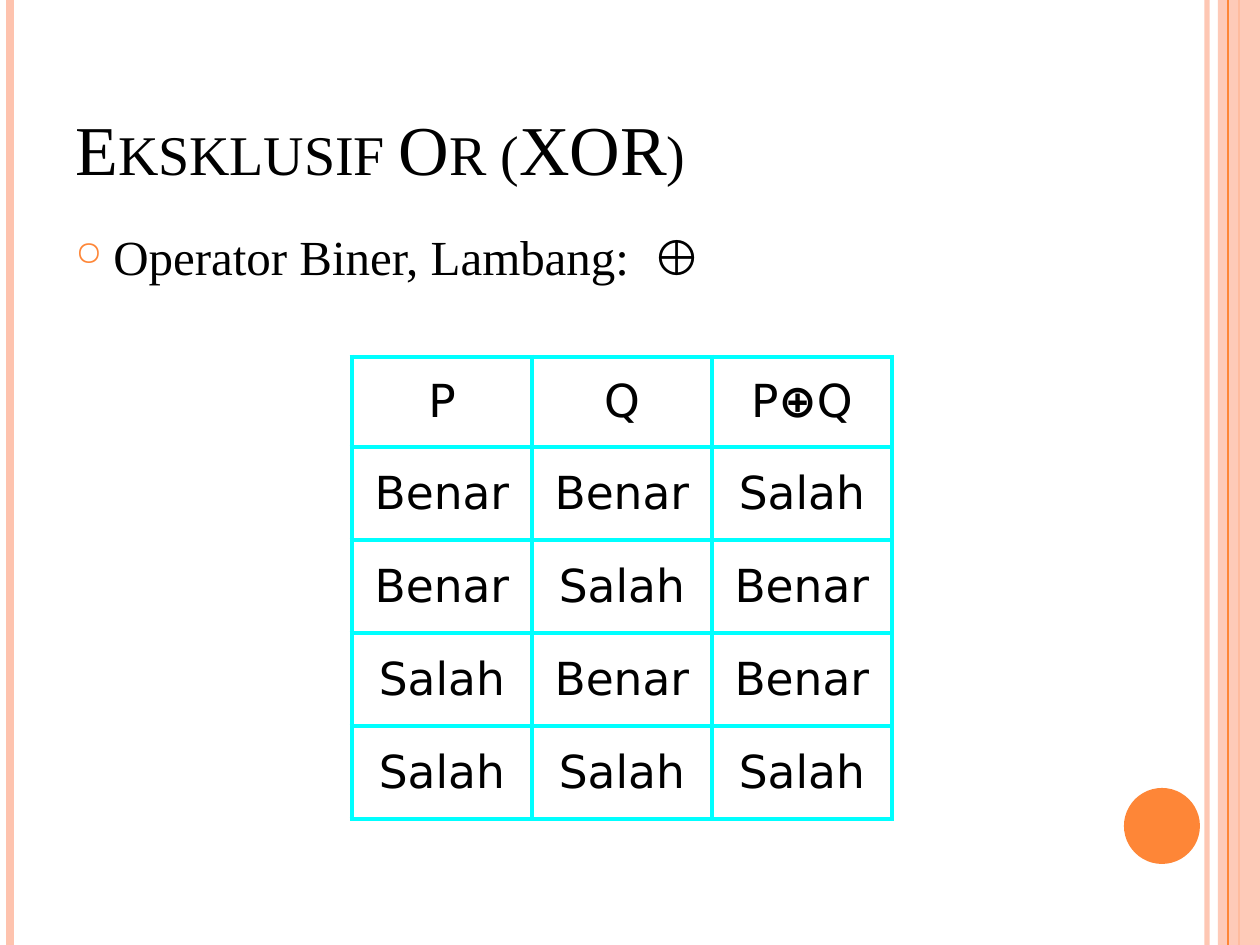
from dataclasses import dataclass

from lxml import etree
from pptx import Presentation, util as u
from pptx.dml.color import RGBColor
from pptx.enum import shapes, text
from pptx.oxml.ns import qn

EMU_PER_PX = 914400 / 126


@dataclass(frozen=True)
class Theme:
    ink: str = "000000"
    accent: str = "FE8637"
    tint: str = "FEC3AE"
    grid: str = "00FFFF"
    serif: str = "Times New Roman"
    sans: str = "DejaVu Sans"
    title: int = 40
    body: int = 28
    cell: int = 26


def px(n):
    return u.Emu(round(n * EMU_PER_PX))


def sub(parent, tag, **attrs):
    el = etree.SubElement(parent, qn(tag))
    for name, value in attrs.items():
        el.set(name, str(value))
    return el


class Deck:
    """Holds the theme and the current slide, and draws each kind of element."""

    def __init__(self, theme, width, height):
        self.theme = theme
        self.height = height
        self.prs = Presentation()
        self.prs.slide_width, self.prs.slide_height = px(width), px(height)
        self.s = self.prs.slides.add_slide(self.prs.slide_layouts[6])

    def fade(self, el, alpha):
        if alpha < 100:
            color = next(el.iter(qn("a:srgbClr")))
            sub(color, "a:alpha", val=alpha * 1000)

    def stripe(self, x, color, width, alpha=100):
        line = self.s.shapes.add_connector(
            shapes.MSO_CONNECTOR.STRAIGHT, px(x), 0, px(x), px(self.height))
        line.line.color.rgb = RGBColor.from_string(color)
        line.line.width = u.Pt(width)
        sp_pr = line._element.spPr
        self.fade(sp_pr, alpha)
        sub(sp_pr, "a:effectLst")

    def shape(self, kind, x, y, w, h, color, alpha=100):
        sp = self.s.shapes.add_shape(kind, px(x), px(y), px(w), px(h))
        sp.shadow.inherit = False
        sp.fill.solid()
        sp.fill.fore_color.rgb = RGBColor.from_string(color)
        sp.line.fill.background()
        self.fade(sp._element.spPr, alpha)

    def style(self, p, face, size):
        p.font.name = face
        p.font.size = u.Pt(size)
        p.font.color.rgb = RGBColor.from_string(self.theme.ink)

    def add_runs(self, p, parts):
        for part in parts:
            r = p.add_run()
            r.text = part
            if part == "⊕":
                r.font.bold = True

    def box(self, x, y, w, h, anchor):
        tf = self.s.shapes.add_textbox(px(x), px(y), px(w), px(h)).text_frame
        tf.word_wrap = True
        tf.vertical_anchor = anchor
        return tf.paragraphs[0]

    def title(self, x, y, w, h, words):
        p = self.box(x, y, w, h, text.MSO_ANCHOR.BOTTOM)
        self.add_runs(p, [words])
        self.style(p, self.theme.serif, self.theme.title)
        p.runs[0]._r.get_or_add_rPr().set("cap", "small")

    def bullet(self, x, y, w, h, parts, indent, tab):
        p = self.box(x, y, w, h, text.MSO_ANCHOR.TOP)
        p_pr = p._p.get_or_add_pPr()
        p_pr.set("marL", str(px(indent)))
        p_pr.set("indent", str(-px(indent)))
        sub(sub(p_pr, "a:buClr"), "a:srgbClr", val=self.theme.accent)
        sub(p_pr, "a:buSzPct", val=70000)
        sub(p_pr, "a:buChar", char="○")
        sub(sub(p_pr, "a:tabLst"), "a:tab", pos=px(tab), algn="l")
        self.add_runs(p, parts)
        self.style(p, self.theme.serif, self.theme.body)

    def borders(self, cell):
        tc_pr = cell._tc.get_or_add_tcPr()
        for i, side in enumerate(("a:lnL", "a:lnR", "a:lnT", "a:lnB")):
            ln = etree.Element(qn(side), w=str(u.Pt(3)))
            sub(sub(ln, "a:solidFill"), "a:srgbClr", val=self.theme.grid)
            tc_pr.insert(i, ln)

    def table(self, x, y, col_width, row_heights, rows):
        cols = len(rows[0])
        frame = self.s.shapes.add_table(
            len(rows), cols, px(x), px(y), px(col_width * cols), px(sum(row_heights)))
        tbl = frame.table
        tbl.first_row = tbl.horz_banding = False
        for col in tbl.columns:
            col.width = px(col_width)
        for row, height, values in zip(tbl.rows, row_heights, rows):
            row.height = px(height)
            for cell, parts in zip(row.cells, values):
                cell.fill.background()
                cell.vertical_anchor = text.MSO_ANCHOR.MIDDLE
                p = cell.text_frame.paragraphs[0]
                p.alignment = text.PP_ALIGN.CENTER
                self.add_runs(p, parts)
                self.style(p, self.theme.sans, self.theme.cell)
                self.borders(cell)


def main():
    theme = Theme()
    deck = Deck(theme, 1260, 945)

    deck.stripe(1207, theme.tint, 3, alpha=93)
    deck.stripe(10, theme.tint, 4.5)
    deck.stripe(1239, theme.accent, 1.5)
    deck.shape(shapes.MSO_SHAPE.RECTANGLE, 1218, 0, 42, 945, theme.tint, alpha=87)
    deck.stripe(1228, theme.accent, 0.75)
    deck.shape(shapes.MSO_SHAPE.OVAL, 1124, 788, 76, 76, theme.accent)

    deck.title(63, 38, 1029, 158, "Eksklusif Or (XOR)")
    deck.bullet(63, 220, 1029, 672, ["Operator Biner, Lambang:\t", "⊕"], 38, 577)

    names = {True: "Benar", False: "Salah"}
    pairs = [(p, q) for p in (True, False) for q in (True, False)]
    truth = [[[names[v]] for v in (p, q, p != q)] for p, q in pairs]
    header = [["P"], ["Q"], ["P", "⊕", "Q"]]
    deck.table(352, 357, 180, [90] + [93] * len(pairs), [header] + truth)

    deck.prs.save("out.pptx")


if __name__ == "__main__":
    main()
